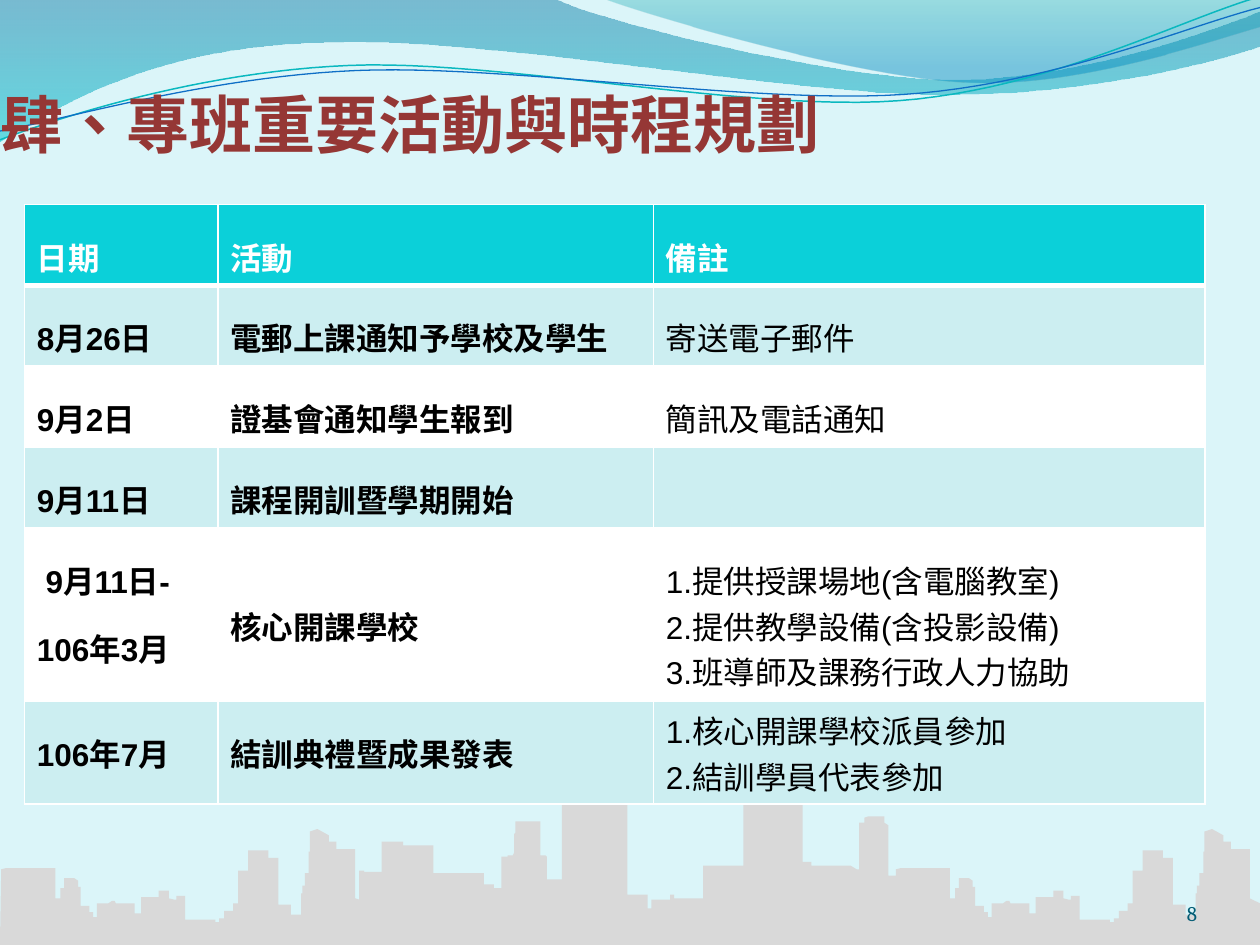
from lxml import etree
from pptx import Presentation
from pptx.dml.color import RGBColor
from pptx.enum.lang import MSO_LANGUAGE_ID
from pptx.enum.text import MSO_ANCHOR, MSO_AUTO_SIZE, PP_ALIGN
from pptx.oxml.ns import qn
from pptx.util import Cm, Pt

BOTTOM, NO_AUTOFIT = MSO_ANCHOR.BOTTOM, MSO_AUTO_SIZE.NONE
LEFT, RIGHT = PP_ALIGN.LEFT, PP_ALIGN.RIGHT
TRADITIONAL_CHINESE = MSO_LANGUAGE_ID.TRADITIONAL_CHINESE
PALE_BLUE = RGBColor(0xDB, 0xF5, 0xF9)
DEEP_BLUE = RGBColor(0x00, 0x74, 0xA1)
TURQUOISE = RGBColor(0x00, 0xC6, 0xCF)
TEAL = RGBColor(0x00, 0xA1, 0xA9)
SEA_BLUE = RGBColor(0x00, 0x8B, 0xBF)
LINE_TEAL = RGBColor(0x0A, 0xB8, 0xBF)
LINE_BLUE = RGBColor(0x0F, 0x6F, 0xC6)
SKYLINE_GREY = RGBColor(0xD9, 0xD9, 0xD9)
NUMBER_BLUE = RGBColor(0x04, 0x5D, 0x75)
HEADER_CYAN = RGBColor(0x0B, 0xD0, 0xD9)
BAND_CYAN = RGBColor(0xCC, 0xEE, 0xF1)
TITLE_RED = RGBColor(0x95, 0x37, 0x35)
WHITE = RGBColor(0xFF, 0xFF, 0xFF)
BLACK = RGBColor(0x00, 0x00, 0x00)
UNIT = Cm(0.0254)  # outline points are in hundredths of an inch


def curve(*points, steps=24):
    """Sample a chain of cubic Bezier curves: start, then three points each."""
    samples = [points[0]]
    for first in range(0, len(points) - 1, 3):
        a, b, c, d = points[first:first + 4]
        for step in range(1, steps + 1):
            t = step / steps
            u = 1 - t
            samples.append(tuple(
                u**3 * a[i] + 3 * u * u * t * b[i] + 3 * u * t * t * c[i] + t**3 * d[i]
                for i in (0, 1)))
    return samples


def draw_outline(slide, points, close=True):
    scaled = [(round(x * UNIT), round(y * UNIT)) for x, y in points]
    builder = slide.shapes.build_freeform(*scaled[0], scale=1.0)
    builder.add_line_segments(scaled[1:], close=close)
    outline = builder.convert_to_shape()
    outline.shadow.inherit = False
    outline.fill.background()
    outline.line.fill.background()
    return outline


deck = Presentation()
deck.slide_width, deck.slide_height = Cm(25.4), Cm(19.05)
slide = deck.slides.add_slide(deck.slide_layouts[5])
slide.background.fill.solid()
slide.background.fill.fore_color.rgb = PALE_BLUE

# Waves at the top: outline, then (position, colour, opacity in percent)
left_wave = (
    [(0, -1)]
    + curve((440, -1), (476, 17), (664, 63), (758, 63), (853, 63), (958, 26), (1000, 9))
    + curve((1001, 36), (983, 44), (870, 76), (746, 75), (622, 75), (382, 28), (257, 34),
            (129, 35), (46, 83), (-1, 113)))
right_wave = curve((479, -1), (509, 11), (682, 62), (769, 65),
                   (856, 69), (961, 32), (1000, 21)) + [(1000, 0)]
waves = [
    (left_wave, [(0, DEEP_BLUE, 45), (1, TURQUOISE, 55)]),
    (right_wave, [(0, TEAL, 30), (0.8, SEA_BLUE, 45)]),
]
for points, stops in waves:
    wave = draw_outline(slide, points)
    wave.fill.gradient()
    wave.fill.gradient_angle = 270
    for stop, (position, color, _) in zip(wave.fill.gradient_stops, stops):
        stop.position = position
        stop.color.rgb = color
    colors = wave.element.spPr.find(qn("a:gradFill")).iter(qn("a:srgbClr"))
    for color, (_, _, opacity) in zip(colors, stops):
        etree.SubElement(color, qn("a:alpha"), val=str(opacity * 1000))

# Thin wave lines
wave_lines = [
    (LINE_TEAL, 0.85, curve((0, 111), (48, 93), (158, 57), (277, 52), (395, 47), (593, 89),
                            (713, 80), (833, 71), (938, 15), (998, -2))),
    (LINE_BLUE, 0.75, curve((0, 104), (47, 96), (164, 61), (283, 56), (403, 51), (597, 83),
                            (717, 75), (836, 67), (941, 21), (1000, 6))),
]
for color, width, points in wave_lines:
    wave_line = draw_outline(slide, points, close=False)
    wave_line.line.color.rgb = color
    wave_line.line.width = Pt(width)

# Skyline: the same block of houses stands on both sides of the centre
houses = [
    (282, 713), (282, 674), (267, 674), (267, 668), (261, 668), (261, 663), (252, 658),
    (246, 660), (246, 676), (245, 676), (245, 693), (242, 693), (242, 703), (240, 703),
    (240, 709), (239, 709), (239, 726), (231, 726), (231, 718), (221, 718), (221, 681),
    (213, 681), (213, 675), (197, 675), (197, 691), (189, 691), (189, 717), (185, 717),
    (185, 723), (178, 723), (178, 729), (174, 729), (174, 732), (171, 732), (171, 730),
    (147, 730), (147, 711), (140, 711), (140, 714), (138, 714), (134, 713), (134, 707),
    (126, 707), (126, 712), (112, 712), (112, 725), (107, 725), (107, 717), (92, 717),
    (91, 715), (89, 715), (86, 717), (77, 717), (77, 728), (74, 728), (74, 724), (71, 724),
    (71, 719), (64, 719), (64, 704), (62, 704), (62, 699), (59, 697), (51, 697), (51, 705),
    (48, 705), (48, 713), (44, 713), (44, 689), (5, 689), (1, 690),
]
towers = [
    (711, 695), (705, 695), (705, 655), (702, 653), (702, 648), (689, 648), (686, 649),
    (686, 653), (682, 653), (682, 690), (680, 690), (675, 687), (644, 687), (644, 684),
    (637, 684), (637, 615), (590, 615), (590, 687), (558, 687), (558, 713), (535, 713),
    (535, 710), (532, 710), (532, 714), (517, 714), (517, 721), (514, 721), (514, 710),
    (498, 710), (498, 621), (494, 621), (494, 612), (478, 607), (470, 606), (470, 603),
    (462, 603), (462, 606), (447, 606), (447, 617), (446, 617), (446, 698), (434, 698),
    (434, 680), (433, 679), (429, 679), (429, 652), (409, 652), (409, 661), (408, 662),
    (408, 677), (407, 679), (403, 679), (403, 680), (398, 680), (398, 705), (392, 705),
    (392, 702), (384, 702), (384, 693), (344, 693), (344, 671), (320, 671), (320, 668),
    (303, 668), (303, 692), (289, 692), (289, 691), (285, 691), (285, 714),
]
ground = [(0, 750), (1000, 750), (1000, 717)]
right_houses = [(x + 710, y) for x, y in houses]
skyline = draw_outline(slide, right_houses + towers + houses + ground)
skyline.fill.solid()
skyline.fill.fore_color.rgb = SKYLINE_GREY

# Page number
number_box = slide.shapes.add_textbox(Cm(22.02), Cm(17.65), Cm(2.11), Cm(1.02))
frame = number_box.text_frame
frame.word_wrap = True
frame.vertical_anchor = BOTTOM
frame.margin_left = frame.margin_right = frame.margin_top = frame.margin_bottom = 0
para = frame.paragraphs[0]
para.text = "8"
para.alignment = RIGHT
para.font.size, para.font.name = Pt(12), "Cambria"
para.font.color.rgb = NUMBER_BLUE

# Schedule table
schedule = [
    ("日期", "活動", "備註"),
    ("8月26日", "電郵上課通知予學校及學生", "寄送電子郵件"),
    ("9月2日", "證基會通知學生報到", "簡訊及電話通知"),
    ("9月11日", "課程開訓暨學期開始", ""),
    (" 9月11日-\n106年3月", "核心開課學校",
     "1.提供授課場地(含電腦教室)\n2.提供教學設備(含投影設備)\n3.班導師及課務行政人力協助"),
    ("106年7月", "結訓典禮暨成果發表", "1.核心開課學校派員參加\n2.結訓學員代表參加"),
]
# Line spacing that differs from 1.5: (row, column, paragraph)
spacing = {(4, 1, 0): 2.5, (4, 2, 1): 1.0, (4, 2, 2): 1.0, (5, 2, 0): 1.0, (5, 2, 1): 1.0}
table = slide.shapes.add_table(6, 3, Cm(0.49), Cm(4.12), Cm(23.8), Cm(12.09)).table
for column, width in zip(table.columns, (3.9, 8.78, 11.12)):
    column.width = Cm(width)
for row, height in zip(table.rows, (1.63, 1.63, 1.63, 1.63, 3.49, 2.08)):
    row.height = Cm(height)
for r, texts in enumerate(schedule):
    for c, text in enumerate(texts):
        cell = table.cell(r, c)
        cell.text = text
        for p, para in enumerate(cell.text_frame.paragraphs):
            para.line_spacing = spacing.get((r, c, p), 1.5)
            para.font.size = Pt(18)
            para.font.name = "Arial" if r else "Noto Sans CJK SC"
            para.font.bold = r == 0 or c < 2
            para.font.color.rgb = BLACK if r else WHITE
        properties = cell._tc.get_or_add_tcPr()
        for side in "LRTB":
            thick = (r, side) in ((0, "B"), (1, "T"))
            border = etree.SubElement(properties, qn(f"a:ln{side}"), w=str(Pt(3 if thick else 1)))
            border_fill = etree.SubElement(border, qn("a:solidFill"))
            etree.SubElement(border_fill, qn("a:srgbClr"), val=str(WHITE))
        cell.fill.solid()
        cell.fill.fore_color.rgb = HEADER_CYAN if r == 0 else BAND_CYAN if r % 2 else WHITE

# Title, brought in front of the waves
title = slide.shapes.title
title.left, title.top, title.width, title.height = Cm(0), Cm(0.71), Cm(22.86), Cm(2.54)
frame = title.text_frame
frame.auto_size = NO_AUTOFIT
frame.vertical_anchor = BOTTOM
frame.margin_left = frame.margin_right = frame.margin_bottom = 0
frame.margin_top = Cm(0.13)
para = frame.paragraphs[0]
para.text = "肆、專班重要活動與時程規劃"
para.alignment = LEFT
para.font.size, para.font.name, para.font.bold = Pt(36), "Calibri", True
para.font.color.rgb = TITLE_RED
para.runs[0].font.language_id = TRADITIONAL_CHINESE
title.element.getparent().append(title.element)

deck.save("out.pptx")
